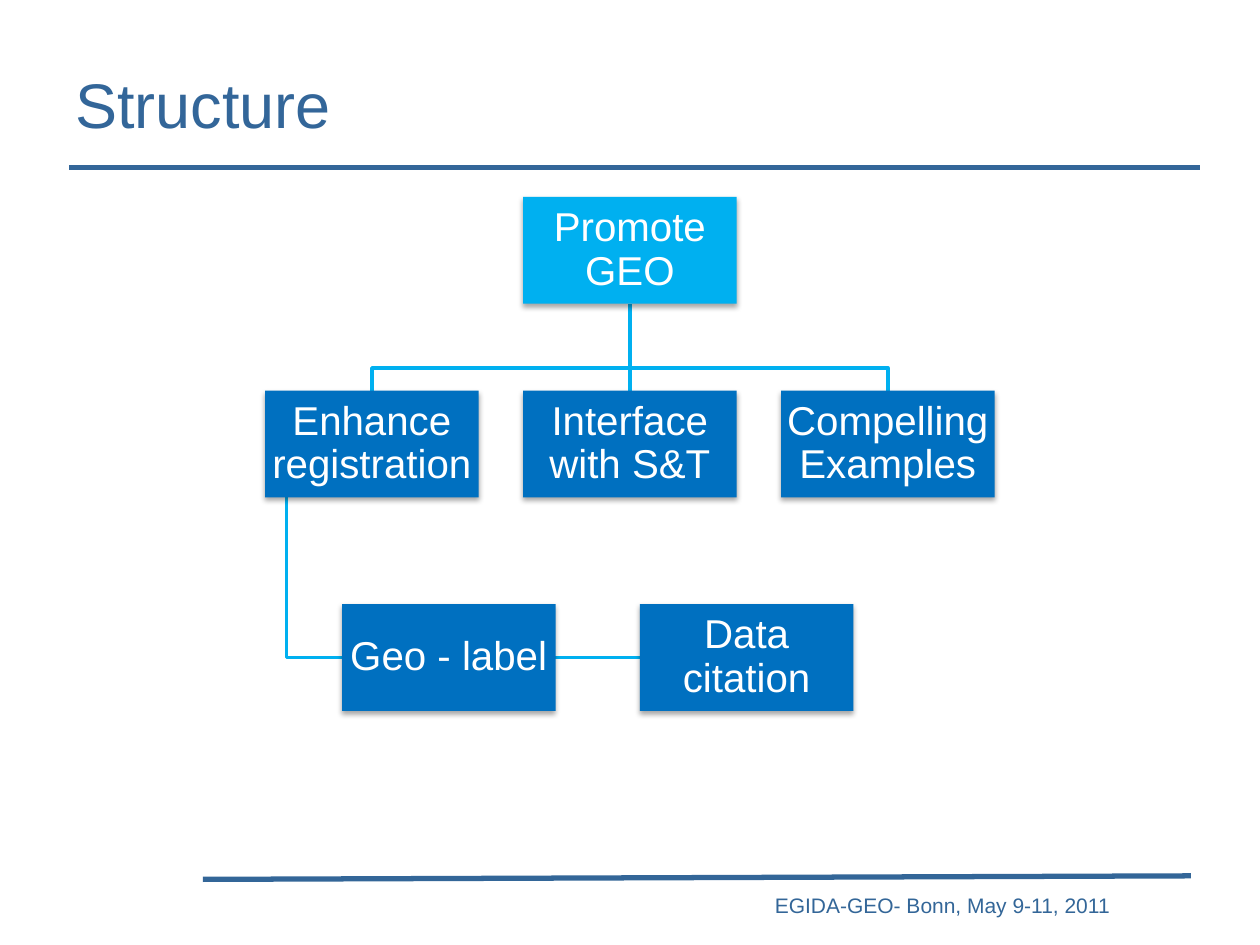
"""Build the Structure slide: an organisation chart between two rules."""
from lxml import etree
from pptx import Presentation
from pptx.dml.color import RGBColor
from pptx.enum.shapes import MSO_CONNECTOR, MSO_SHAPE
from pptx.enum.text import MSO_ANCHOR, PP_ALIGN
from pptx.oxml import parse_xml
from pptx.oxml.ns import qn
from pptx.util import Pt

STRAIGHT, RECT = MSO_CONNECTOR.STRAIGHT, MSO_SHAPE.RECTANGLE
MIDDLE, TOP = MSO_ANCHOR.MIDDLE, MSO_ANCHOR.TOP
LEFT, CENTER, RIGHT = PP_ALIGN.LEFT, PP_ALIGN.CENTER, PP_ALIGN.RIGHT

WHITE = RGBColor(0xFF, 0xFF, 0xFF)
SLATE = RGBColor(0x33, 0x66, 0x99)
FOOT_SLATE = RGBColor(0x33, 0x66, 0x98)
SKY = RGBColor(0x00, 0xB0, 0xF0)
BLUE = RGBColor(0x00, 0x70, 0xC0)

RULES = [
    ((116, 502.5), (680.5, 500.5), FOOT_SLATE),
    ((39.5, 95.8), (686, 95.8), SLATE),
]
LABELS = [
    ("EGIDA-GEO- Bonn, May 9-11, 2011", (157.7, 506.2, 483.8, 21.6), RIGHT, TOP, 12, FOOT_SLATE),
    ("Structure", (36, 33.8, 648, 50.4), LEFT, MIDDLE, 36, SLATE),
]
ROOT = "Promote GEO"
BRANCHES = ["Enhance registration", "Interface with S&T", "Compelling Examples"]
LEAVES = ["Geo - label", "Data citation"]

BOX_W, BOX_H = 122, 61
MID_X, BRANCH_STEP = 360, 147.4
ROOT_Y, BRANCH_Y, LEAF_Y = 112.6, 223.3, 345.2
LEAF_X, LEAF_STEP = 195.5, 170.2
BUS_Y = 210.3
SHADOW = (
    '<a:outerShdw xmlns:a="http://schemas.openxmlformats.org/drawingml/2006/main" '
    f'blurRad="{Pt(3.1)}" dist="{Pt(1.8)}" dir="5400000" rotWithShape="0">'
    '<a:srgbClr val="000000"><a:alpha val="35000"/></a:srgbClr></a:outerShdw>'
)


def add_line(shapes, start, end, color, width):
    sp = shapes.add_connector(STRAIGHT, *map(Pt, start + end))
    sp.line.color.rgb = color
    sp.line.width = Pt(width)
    etree.SubElement(sp._element.spPr, qn("a:effectLst"))


def add_bend(shapes, points):
    pts = [(Pt(x), Pt(y)) for x, y in points]
    builder = shapes.build_freeform(*pts[0])
    builder.add_line_segments(pts[1:], close=False)
    sp = builder.convert_to_shape()
    sp.shadow.inherit = False
    sp.fill.background()
    sp.line.color.rgb = SKY
    sp.line.width = Pt(2)


def set_text(sp, text, align, anchor, size, color, **frame):
    tf = sp.text_frame
    for name, value in {"word_wrap": True, "vertical_anchor": anchor, **frame}.items():
        setattr(tf, name, value)
    p = tf.paragraphs[0]
    p.alignment = align
    r = p.add_run()
    r.text = text
    for name, value in {"name": "Arial", "size": Pt(size)}.items():
        setattr(r.font, name, value)
    r.font.color.rgb = color
    return p


def add_box(shapes, text, x, y, color):
    sp = shapes.add_shape(RECT, *map(Pt, (x, y, BOX_W, BOX_H)))
    sp.shadow.inherit = False
    sp._element.spPr.find(qn("a:effectLst")).append(parse_xml(SHADOW))
    sp.fill.solid()
    sp.fill.fore_color.rgb = color
    sp.line.fill.background()
    sides = ("left", "top", "right", "bottom")
    margins = {f"margin_{side}": Pt(1.2) for side in sides}
    p = set_text(sp, text, CENTER, MIDDLE, 23, WHITE, **margins)
    p.line_spacing = 0.9


def main():
    prs = Presentation()
    prs.slide_width, prs.slide_height = Pt(720), Pt(540)
    shapes = prs.slides.add_slide(prs.slide_layouts[6]).shapes

    for start, end, color in RULES:
        add_line(shapes, start, end, color, 3)
    for text, place, *style in LABELS:
        set_text(shapes.add_textbox(*map(Pt, place)), text, *style)

    root_bottom = ROOT_Y + BOX_H
    centers = [MID_X + (i - 1) * BRANCH_STEP for i in range(len(BRANCHES))]
    for x in centers:
        if x == MID_X:
            add_line(shapes, (x, root_bottom), (x, BRANCH_Y), SKY, 2)
        else:
            add_bend(shapes, [(MID_X, root_bottom), (MID_X, BUS_Y), (x, BUS_Y), (x, BRANCH_Y)])

    stem_x = centers[0] - BOX_W * 0.4
    leaf_mid = LEAF_Y + BOX_H / 2
    leaf_xs = [LEAF_X + i * LEAF_STEP for i in range(len(LEAVES))]
    add_bend(shapes, [(stem_x, BRANCH_Y + BOX_H), (stem_x, leaf_mid), (leaf_xs[-1], leaf_mid)])

    add_box(shapes, ROOT, MID_X - BOX_W / 2, ROOT_Y, SKY)
    for text, x in zip(BRANCHES, centers):
        add_box(shapes, text, x - BOX_W / 2, BRANCH_Y, BLUE)
    for text, x in zip(LEAVES, leaf_xs):
        add_box(shapes, text, x, LEAF_Y, BLUE)

    prs.save("out.pptx")


if __name__ == "__main__":
    main()
